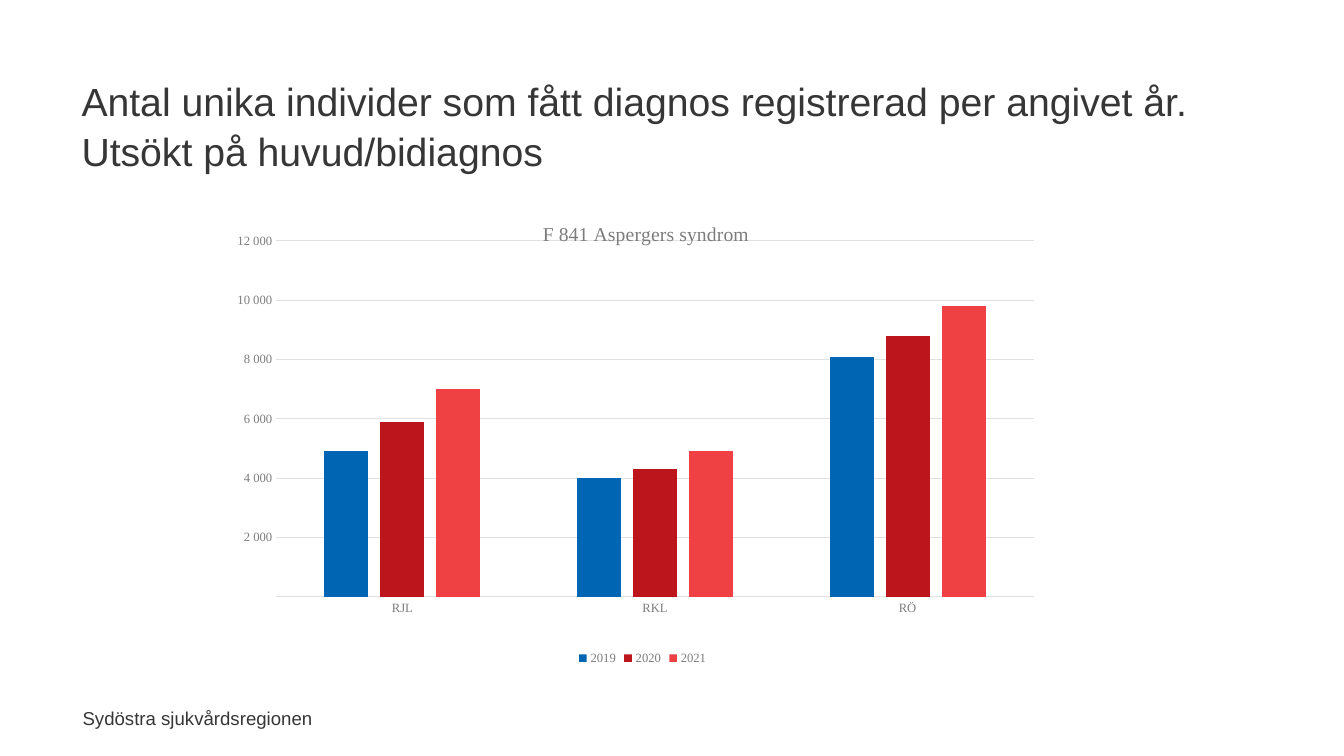
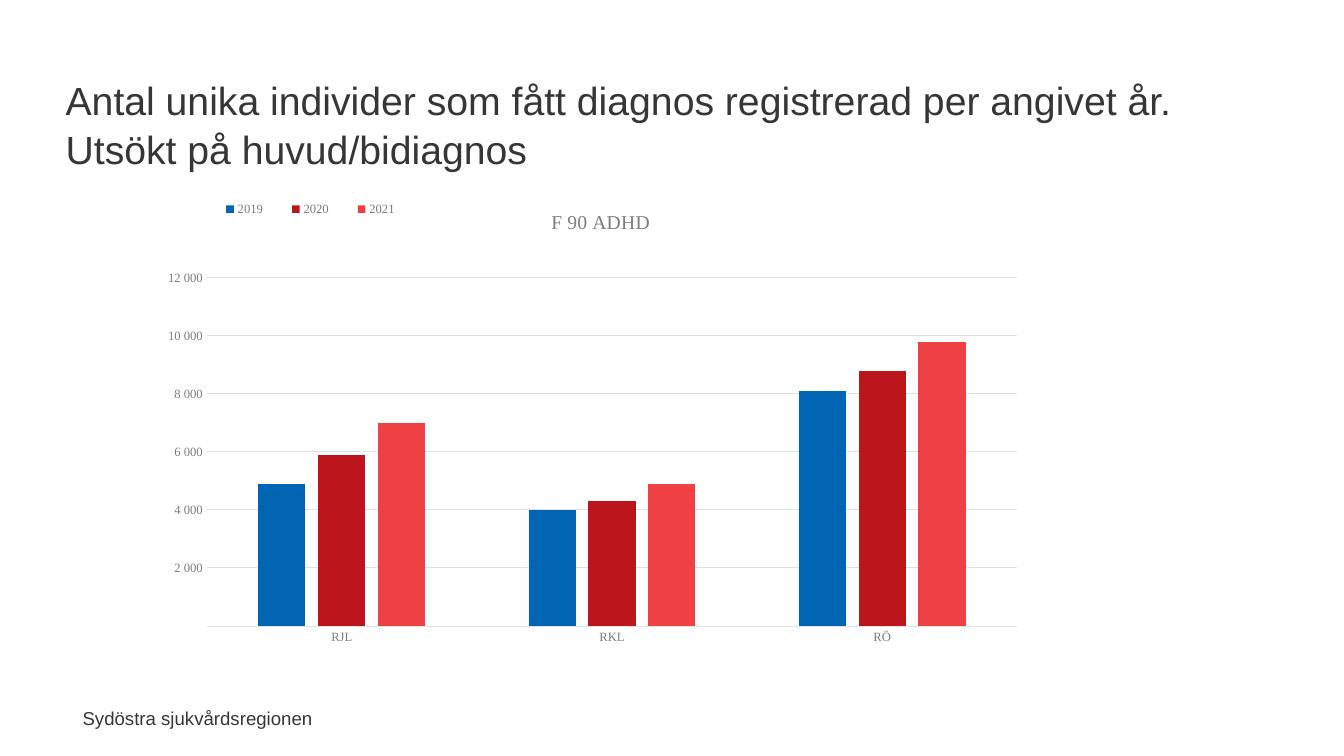
from lxml.etree import SubElement
from pptx import Presentation
from pptx.chart.data import CategoryChartData
from pptx.dml.color import RGBColor
from pptx.enum.chart import XL_CHART_TYPE, XL_LEGEND_POSITION, XL_TICK_MARK
from pptx.enum.text import MSO_ANCHOR, MSO_AUTO_SIZE, PP_ALIGN
from pptx.oxml.ns import qn
from pptx.util import Cm, Pt

SLIDE_SIZE = (33.87, 19.05)
TEXT_COLOR = "363636"
CHART_TEXT = "7C7C7C"
GRID_COLOR = "E1E1E1"
TEXT_FONT = "Arial"
CHART_FONT = "Times New Roman"
TITLE = ("Antal unika individer som fått diagnos registrerad per angivet år. "
         "Utsökt på huvud/bidiagnos")
FOOTER = "Sydöstra sjukvårdsregionen"
REGIONS = ("RJL", "RKL", "RÖ")
YEARS = (
    ("2019", (4900, 4000, 8100), "0066B3"),
    ("2020", (5900, 4300, 8800), "BC151C"),
    ("2021", (7000, 4900, 9800), "EF4044"),
)


def rgb(value):
    return RGBColor.from_string(value)


def lengths(*values):
    return [Cm(value) for value in values]


def style_font(font, name, size, color):
    font.name = name
    font.size = Pt(size)
    font.bold = False
    font.color.rgb = rgb(color)


def add_run(para, text, name, size, color):
    span = para.add_run()
    span.text = text
    style_font(span.font, name, size, color)


def add_footer(layout, page):
    """Build the footer on a page, then move it to the layout all pages share."""
    box = page.shapes.add_textbox(*lengths(1.78, 17.68, 6.35, 0.84))
    box.text_frame.word_wrap = False
    para = box.text_frame.paragraphs[0]
    para.alignment = PP_ALIGN.RIGHT
    add_run(para, FOOTER, TEXT_FONT, 13.3, TEXT_COLOR)
    layout.shapes._spTree.append(box._element)


def set_title(page, left, top):
    title = page.shapes.title
    title.left, title.top, title.width, title.height = lengths(left, top, 30.48, 3.18)
    frame = title.text_frame
    frame.word_wrap = True
    frame.auto_size = MSO_AUTO_SIZE.NONE
    frame.vertical_anchor = MSO_ANCHOR.MIDDLE
    para = frame.paragraphs[0]
    para.alignment = PP_ALIGN.LEFT
    para.line_spacing = 1.05
    add_run(para, TITLE, TEXT_FONT, 28, TEXT_COLOR)


def place_part(chart, tag, index, position, inner=False):
    """Give a chart part a manual layout, in fractions of the chart."""
    part = chart._chartSpace.find(".//" + qn(tag))
    for old in part.findall(qn("c:layout")):
        part.remove(old)
    layout = SubElement(part, qn("c:layout"))
    part.insert(index, layout)
    manual = SubElement(layout, qn("c:manualLayout"))
    settings = [("layoutTarget", "inner")] if inner else []
    settings += [("xMode", "edge"), ("yMode", "edge")]
    settings += zip("xywh", position)
    for name, value in settings:
        SubElement(manual, qn("c:" + name)).set("val", str(value))


def style_axis(axis):
    axis.major_tick_mark = XL_TICK_MARK.NONE
    axis.minor_tick_mark = XL_TICK_MARK.NONE
    style_font(axis.tick_labels.font, CHART_FONT, 9, CHART_TEXT)


def style_grid_line(line):
    line.color.rgb = rgb(GRID_COLOR)
    line.width = Pt(0.75)


def style_axes(chart):
    style_axis(chart.category_axis)
    style_grid_line(chart.category_axis.format.line)
    values = chart.value_axis
    style_axis(values)
    values.minimum_scale = 0
    values.maximum_scale = 12000
    values.major_unit = 2000
    values.format.line.fill.background()
    values.has_major_gridlines = True
    style_grid_line(values.major_gridlines.format.line)
    values.tick_labels.number_format = "#\\ ###"
    values.tick_labels.number_format_is_linked = False


def style_columns(chart):
    plot = chart.plots[0]
    plot.gap_width = 219
    plot.overlap = -27
    plot.vary_by_categories = False
    for series, (_, _, color) in zip(plot.series, YEARS):
        series.invert_if_negative = False
        series.format.fill.solid()
        series.format.fill.fore_color.rgb = rgb(color)


def add_diagnosis_chart(page, heading, place, plot, heading_at, legend_at=None):
    data = CategoryChartData()
    data.categories = REGIONS
    for year, counts, _ in YEARS:
        data.add_series(year, counts)
    chart = page.shapes.add_chart(
        XL_CHART_TYPE.COLUMN_CLUSTERED, *lengths(*place), data).chart
    style_font(chart.font, CHART_FONT, 10, TEXT_COLOR)
    style_columns(chart)
    style_axes(chart)

    chart.has_title = True
    para = chart.chart_title.text_frame.paragraphs[0]
    add_run(para, heading, CHART_FONT, 14, CHART_TEXT)
    chart.has_legend = True
    chart.legend.position = XL_LEGEND_POSITION.BOTTOM
    chart.legend.include_in_layout = False
    style_font(chart.legend.font, CHART_FONT, 9, CHART_TEXT)

    place_part(chart, "c:plotArea", 0, plot, inner=True)
    place_part(chart, "c:title", 1, heading_at)
    if legend_at:
        place_part(chart, "c:legend", 1, legend_at)


def main():
    deck = Presentation()
    deck.slide_width, deck.slide_height = lengths(*SLIDE_SIZE)
    layout = deck.slide_layouts.get_by_name("Title Only")

    asperger = deck.slides.add_slide(layout)
    add_footer(layout, asperger)
    set_title(asperger, 1.8, 1.55)
    add_diagnosis_chart(
        asperger, "F 841 Aspergers syndrom", (5.77, 5.08, 20.85, 11.79),
        plot=(0.057, 0.084, 0.916, 0.761), heading_at=(0.375, 0.035))

    adhd = deck.slides.add_slide(layout)
    set_title(adhd, 1.4, 1.52)
    add_diagnosis_chart(
        adhd, "F 90 ADHD", (3.84, 4.7, 22.45, 11.86),
        plot=(0.061, 0.194, 0.91, 0.74), heading_at=(0.444, 0.041),
        legend_at=(0.055, 0.018, 0.245, 0.06))

    deck.save("out.pptx")


if __name__ == "__main__":
    main()
